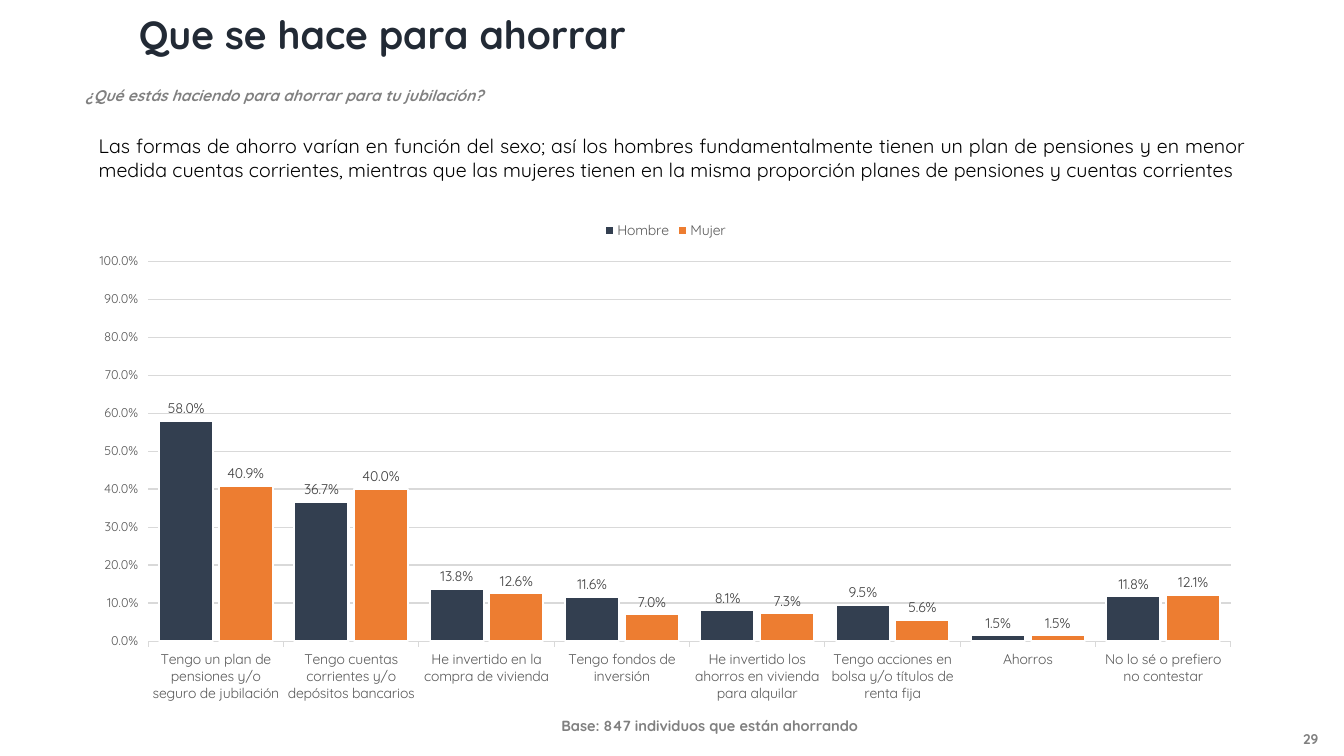
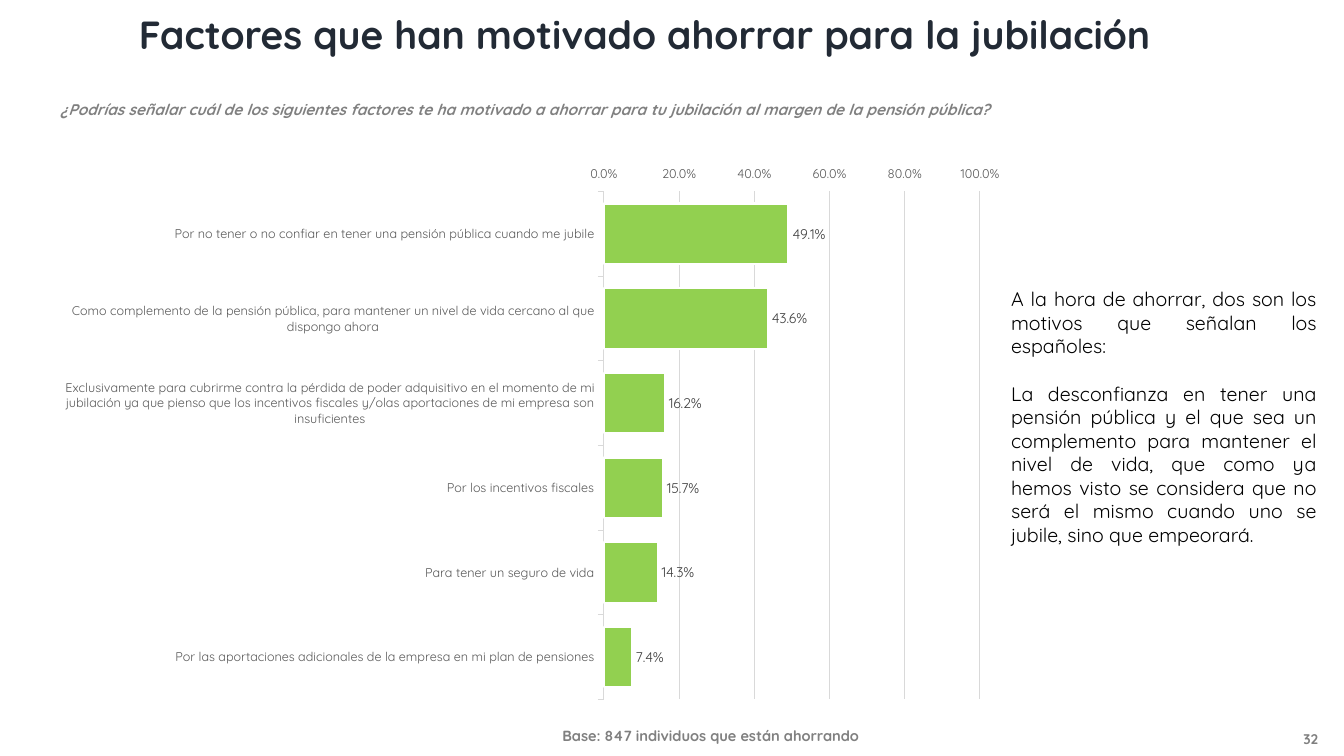
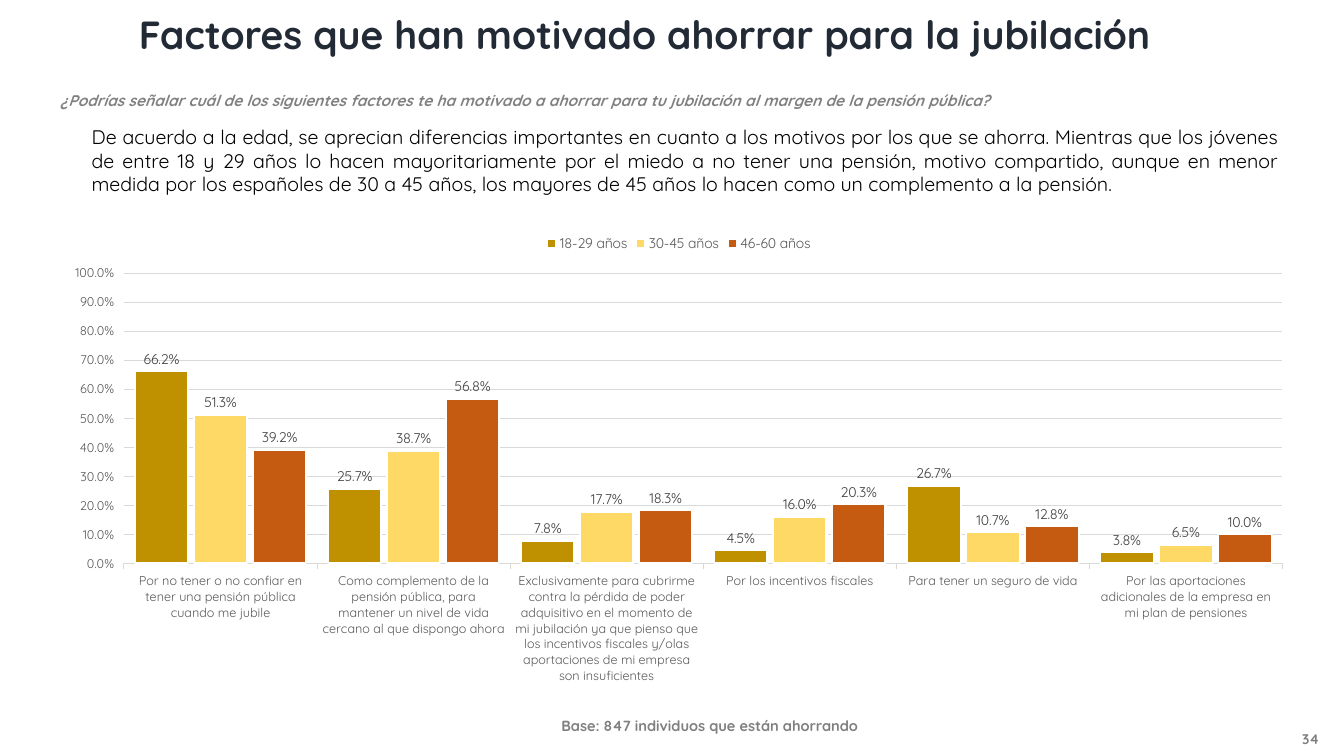
from pptx import Presentation
from pptx.chart.data import CategoryChartData
from pptx.dml.color import RGBColor
from pptx.enum.chart import XL_CHART_TYPE, XL_LABEL_POSITION, XL_LEGEND_POSITION, XL_TICK_MARK
from pptx.enum.text import MSO_ANCHOR, MSO_AUTO_SIZE, PP_ALIGN
from pptx.oxml import parse_xml
from pptx.oxml.ns import nsdecls
from pptx.util import Inches, Pt

FONT = "Quicksand"
HUES = {
    "title": "222A35", "gray": "808080", "body": "000000", "axis": "595959",
    "label": "404040", "grid": "D9D9D9", "white": "FFFFFF",
    "navy": "333F50", "orange": "ED7D31", "green": "92D050",
    "gold": "BF9000", "yellow": "FFD966", "rust": "C55A11",
}
BASE = "Base: 847 individuos que están ahorrando"
MOTIVE = "Factores que han motivado ahorrar para la jubilación"
ASK = ("¿Podrías señalar cuál de los siguientes factores te ha motivado a ahorrar "
       "para tu jubilación al margen de la pensión pública?")
WAYS = [
    "Tengo un plan de pensiones y/o seguro de jubilación",
    "Tengo cuentas corrientes y/o depósitos bancarios",
    "He invertido en la compra de vivienda",
    "Tengo fondos de inversión",
    "He invertido los ahorros en vivienda para alquilar",
    "Tengo acciones en bolsa y/o títulos de renta fija",
    "Ahorros",
    "No lo sé o prefiero no contestar",
]
CAUSES = [
    "Por no tener o no confiar en tener una pensión pública cuando me jubile",
    "Como complemento de la pensión pública, para mantener un nivel de vida cercano al que dispongo ahora",
    "Exclusivamente para cubrirme contra la pérdida de poder adquisitivo en el momento de mi jubilación "
    "ya que pienso que los incentivos fiscales y/olas aportaciones de mi empresa son insuficientes",
    "Por los incentivos fiscales",
    "Para tener un seguro de vida",
    "Por las aportaciones adicionales de la empresa en mi plan de pensiones",
]
PAGES = [
    {
        "page": "29", "title": "Que se hace para ahorrar", "width": 5.17,
        "ask": "¿Qué estás haciendo para ahorrar para tu jubilación?",
        "ask_box": (0.75, 0.81, 4.34, 0.29), "base_box": (5.47, 7.06, 3.17, 0.28),
        "body": ["Las formas de ahorro varían en función del sexo; así los hombres fundamentalmente "
                 "tienen un plan de pensiones y en menor medida cuentas corrientes, mientras que las "
                 "mujeres tienen en la misma proporción planes de pensiones y cuentas corrientes"],
        "body_box": (0.88, 1.28, 11.58, 0.81),
        "chart": (0.75, 2.09, 11.7, 4.97), "plot": (1.47, 2.59, 10.74, 3.77),
        "kind": XL_CHART_TYPE.COLUMN_CLUSTERED, "cats": WAYS, "size": 10, "step": 0.1,
        "rows": [
            ("Hombre", "navy", [0.58, 0.367, 0.138, 0.116, 0.081, 0.095, 0.015, 0.118]),
            ("Mujer", "orange", [0.409, 0.4, 0.126, 0.07, 0.073, 0.056, 0.015, 0.121]),
        ],
    },
    {
        "page": "32", "title": MOTIVE, "width": 10.41, "ask": ASK,
        "ask_box": (0.5, 0.94, 9.61, 0.29), "base_box": (5.48, 7.16, 3.17, 0.28),
        "body": ["A la hora de ahorrar, dos son los motivos que señalan los españoles:",
                 "La desconfianza en tener una pensión pública y el que sea un complemento para "
                 "mantener el nivel de vida, que como ya hemos visto se considera que no será el "
                 "mismo cuando uno se jubile, sino que empeorará."],
        "body_box": (9.93, 2.8, 3.23, 2.69),
        "chart": (0.46, 1.54, 9.65, 5.52), "plot": (5.99, 1.9, 3.73, 5.04),
        "kind": XL_CHART_TYPE.BAR_CLUSTERED, "cats": CAUSES, "size": 9, "step": 0.2,
        "rows": [("Series 1", "green", [0.491, 0.436, 0.162, 0.157, 0.143, 0.074])],
    },
    {
        "page": "34", "title": MOTIVE, "width": 10.41, "ask": ASK,
        "ask_box": (0.5, 0.85, 9.61, 0.29), "base_box": (5.47, 7.06, 3.17, 0.28),
        "body": ["De acuerdo a la edad, se aprecian diferencias importantes en cuanto a los motivos "
                 "por los que se ahorra. Mientras que los jóvenes de entre 18 y 29 años lo hacen "
                 "mayoritariamente por el miedo a no tener una pensión, motivo compartido, aunque en "
                 "menor medida por los españoles de 30 a 45 años, los mayores de 45 años lo hacen "
                 "como un complemento a la pensión."],
        "body_box": (0.81, 1.19, 11.98, 0.81),
        "chart": (0.5, 2.22, 12.47, 4.66), "plot": (1.23, 2.71, 11.49, 2.88),
        "kind": XL_CHART_TYPE.COLUMN_CLUSTERED, "cats": CAUSES, "size": 9, "step": 0.1,
        "rows": [
            ("18-29 años", "gold", [0.662, 0.257, 0.078, 0.045, 0.267, 0.038]),
            ("30-45 años", "yellow", [0.513, 0.387, 0.177, 0.16, 0.107, 0.065]),
            ("46-60 años", "rust", [0.392, 0.568, 0.183, 0.203, 0.128, 0.1]),
        ],
    },
]


def style(font, size, hue, bold=False, slant=False):
    font.name = FONT
    font.size = Pt(size)
    font.bold = bold
    font.italic = slant
    font.color.rgb = RGBColor.from_string(HUES[hue])


def write(slide, box, lines, size, hue, bold=True, slant=False, wrap=False, align=PP_ALIGN.LEFT):
    frame = slide.shapes.add_textbox(*map(Inches, box)).text_frame
    frame.text = "\n".join(lines)
    frame.word_wrap = wrap
    frame.auto_size = MSO_AUTO_SIZE.SHAPE_TO_FIT_TEXT
    for i, para in enumerate(frame.paragraphs):
        para.alignment = align
        if i:
            para.space_before = Pt(17)
        for run in para.runs:
            style(run.font, size, hue, bold, slant)
    return frame


deck = Presentation()
deck.slide_width = Inches(13.33)
deck.slide_height = Inches(7.5)

for page in PAGES:
    slide = deck.slides.add_slide(deck.slide_layouts[6])
    foot = write(slide, (12.66, 7.17, 0.68, 0.33), [page["page"]], 10, "gray",
                 wrap=True, align=PP_ALIGN.CENTER)
    foot.auto_size = MSO_AUTO_SIZE.NONE
    foot.vertical_anchor = MSO_ANCHOR.MIDDLE
    write(slide, page["ask_box"], [page["ask"]], 11, "gray", slant=True)
    write(slide, page["base_box"], [BASE], 10.5, "gray")
    write(slide, (1.28, 0.05, page["width"], 0.57), [page["title"]], 28, "title")

    data = CategoryChartData(number_format="0.0%")
    data.categories = page["cats"]
    for name, hue, vals in page["rows"]:
        data.add_series(name, vals)
    area = page["chart"]
    chart = slide.shapes.add_chart(page["kind"], *map(Inches, area), data).chart
    style(chart.font, 10, "axis")
    chart.has_title = False
    many = len(page["rows"]) > 1
    chart.has_legend = many
    if many:
        chart.legend.position = XL_LEGEND_POSITION.TOP
        chart.legend.include_in_layout = False
        style(chart.legend.font, 10, "axis")

    plot = chart.plots[0]
    plot.vary_by_categories = False
    plot.gap_width = 40
    plot.overlap = -10 if many else 0
    for series, (name, hue, vals) in zip(plot.series, page["rows"]):
        series.invert_if_negative = False
        series.format.fill.solid()
        series.format.fill.fore_color.rgb = RGBColor.from_string(HUES[hue])
        series.format.line.color.rgb = RGBColor.from_string(HUES["white"])
        series.format.line.width = Pt(1.5)
        tags = series.data_labels
        tags.show_value = True
        tags.number_format = "0.0%"
        tags.number_format_is_linked = False
        tags.position = XL_LABEL_POSITION.OUTSIDE_END
        style(tags.font, 10, "label")

    cat, val = chart.category_axis, chart.value_axis
    style(cat.tick_labels.font, page["size"], "axis")
    style(val.tick_labels.font, 9, "axis")
    cat.reverse_order = not many
    cat.major_tick_mark = val.major_tick_mark = XL_TICK_MARK.OUTSIDE
    val.minimum_scale, val.maximum_scale, val.major_unit = 0, 1, page["step"]
    val.tick_labels.number_format = "0.0%"
    val.tick_labels.number_format_is_linked = False
    val.format.line.fill.background()
    for line in (cat.format.line, val.major_gridlines.format.line):
        line.color.rgb = RGBColor.from_string(HUES["grid"])
        line.width = Pt(0.75)

    x, y, w, h = page["plot"]
    parts = {"x": (x - area[0]) / area[2], "y": (y - area[1]) / area[3],
             "w": w / area[2], "h": h / area[3]}
    modes = "".join(f'<c:{key}Mode val="edge"/>' for key in "xy")
    sizes = "".join(f'<c:{key} val="{part:.4f}"/>' for key, part in parts.items())
    root = chart.element.xpath(".//c:plotArea")[0]
    for old in root.xpath("./c:layout"):
        root.remove(old)
    root.insert(0, parse_xml(
        f'<c:layout {nsdecls("c")}><c:manualLayout><c:layoutTarget val="inner"/>'
        f'{modes}{sizes}</c:manualLayout></c:layout>'))

    write(slide, page["body_box"], page["body"], 14, "body", bold=False,
          wrap=True, align=PP_ALIGN.JUSTIFY)

deck.save("out.pptx")
